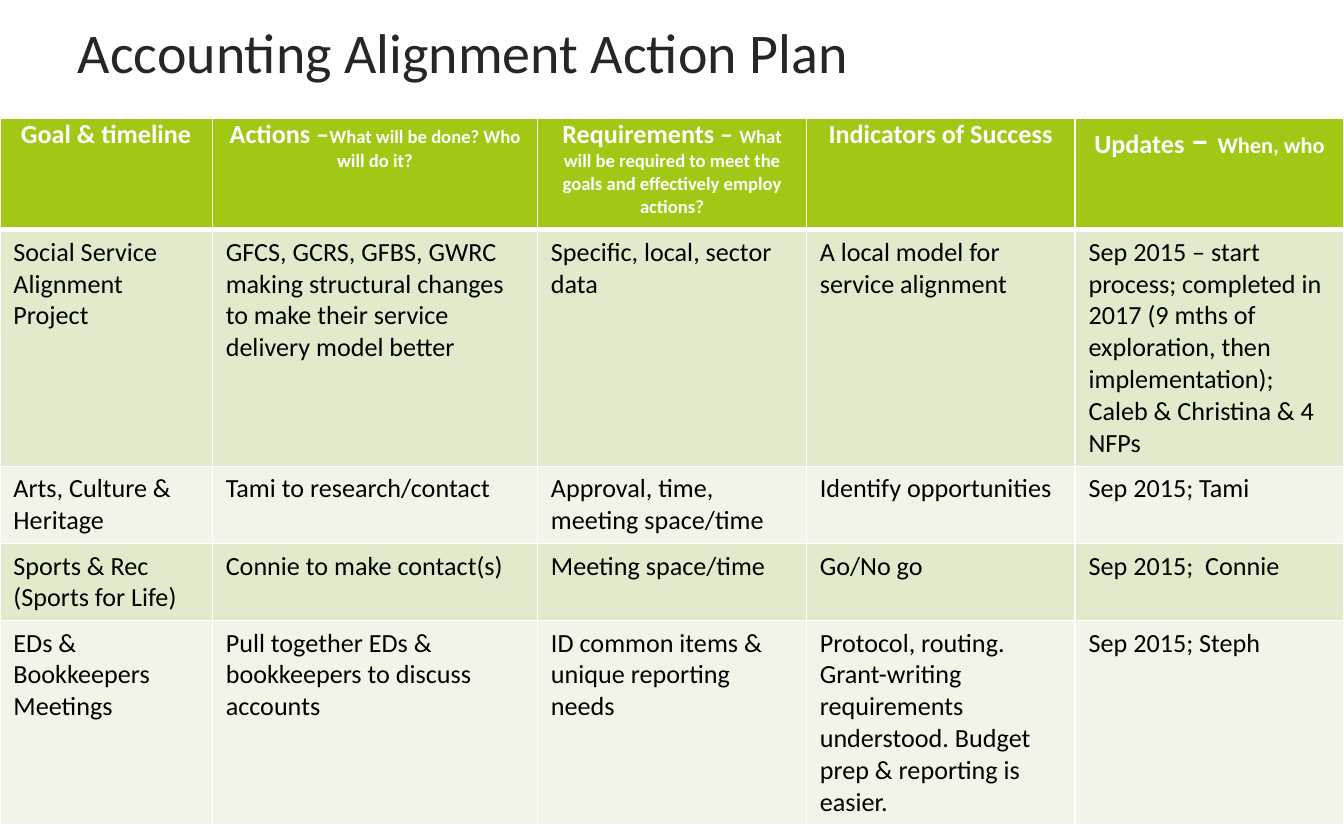
from dataclasses import dataclass

from lxml import etree
from pptx import Presentation
from pptx.dml.color import RGBColor
from pptx.enum import text
from pptx.oxml import ns
from pptx.util import Inches, Pt


@dataclass(frozen=True)
class Theme:
    font: str = "Calibri"
    title_size: int = 30
    size: int = 14
    note_size: int = 10
    title: str = "262626"
    ink: str = "000000"
    white: str = "FFFFFF"
    header: str = "A2C816"
    bands: tuple = ("E0EBCC", "F0F5E8")
    rule: int = 1
    header_rule: int = 3


THEME = Theme()
TITLE = "Accounting Alignment Action Plan"

# Each heading is a list of (text, size) runs.
HEADINGS = [
    [("Goal & timeline", THEME.size)],
    [("Actions –", THEME.size),
     ("What will be done? Who will do it?", THEME.note_size)],
    [("Requirements – ", THEME.size),
     ("What will be required to meet the goals and effectively employ actions?",
      THEME.note_size)],
    [("Indicators of Success", THEME.size)],
    [("Updates ", THEME.size), ("– ", 20), ("When, who", 12)],
]
GOALS = [
    ["Social Service Alignment Project",
     "GFCS, GCRS, GFBS, GWRC making structural changes to make their service "
     "delivery model better",
     "Specific, local, sector data",
     "A local model for service alignment",
     "Sep 2015 – start process; completed in 2017 (9 mths of exploration, then "
     "implementation); Caleb & Christina & 4 NFPs"],
    ["Arts, Culture & Heritage", "Tami to research/contact",
     "Approval, time, meeting space/time", "Identify opportunities",
     "Sep 2015; Tami"],
    ["Sports & Rec (Sports for Life)", "Connie to make contact(s)",
     "Meeting space/time", "Go/No go", "Sep 2015;  Connie"],
    ["EDs & Bookkeepers Meetings",
     "Pull together EDs & bookkeepers to discuss accounts",
     "ID common items & unique reporting needs",
     "Protocol, routing. Grant-writing requirements understood. Budget prep & "
     "reporting is easier.",
     "Sep 2015; Steph"],
]
COLUMN_WIDTHS = [1.58, 2.42, 2, 2, 2]
ROW_HEIGHTS = [0.83, 1.76, 0.57, 0.57, 1.51]


def style_run(r, size, color, bold=False):
    r.font.name = THEME.font
    r.font.size = Pt(size)
    r.font.bold = bold
    r.font.color.rgb = RGBColor.from_string(color)


def add_borders(cell, top, bottom):
    """Draw white rules round a cell; widths are in points."""
    tc_pr = cell._tc.get_or_add_tcPr()
    for side, width in (("L", THEME.rule), ("R", THEME.rule),
                        ("T", top), ("B", bottom)):
        ln = etree.SubElement(tc_pr, ns.qn(f"a:ln{side}"), w=str(Pt(width)))
        fill = etree.SubElement(ln, ns.qn("a:solidFill"))
        etree.SubElement(fill, ns.qn("a:srgbClr"), val=THEME.white)


def fill_cell(cell, runs, row):
    is_header = row == 0
    add_borders(cell,
                top=THEME.header_rule if row == 1 else THEME.rule,
                bottom=THEME.header_rule if is_header else THEME.rule)
    cell.fill.solid()
    cell.fill.fore_color.rgb = RGBColor.from_string(
        THEME.header if is_header else THEME.bands[(row - 1) % 2])
    p = cell.text_frame.paragraphs[0]
    if is_header:
        cell.margin_left = cell.margin_right = Inches(0.07)
        cell.margin_top = cell.margin_bottom = 0
        p.alignment = text.PP_ALIGN.CENTER
    for words, size in runs:
        r = p.add_run()
        r.text = words
        style_run(r, size, THEME.white if is_header else THEME.ink, is_header)


def add_title(s):
    sp = s.shapes.title
    sp.left, sp.top, sp.width, sp.height = map(Inches, (0.48, 0.07, 9.19, 0.62))
    tf = sp.text_frame
    tf.text = TITLE
    tf.vertical_anchor = text.MSO_ANCHOR.MIDDLE
    p = tf.paragraphs[0]
    p.alignment = text.PP_ALIGN.LEFT
    style_run(p.runs[0], THEME.title_size, THEME.title)


def add_plan(s):
    rows = [HEADINGS] + [[[(words, THEME.size)] for words in goal]
                         for goal in GOALS]
    table = s.shapes.add_table(
        len(rows), len(COLUMN_WIDTHS), 0, Inches(0.88),
        Inches(sum(COLUMN_WIDTHS)), Inches(sum(ROW_HEIGHTS))).table
    for column, width in zip(table.columns, COLUMN_WIDTHS):
        column.width = Inches(width)
    for i, (cells, height) in enumerate(zip(rows, ROW_HEIGHTS)):
        table.rows[i].height = Inches(height)
        for j, runs in enumerate(cells):
            fill_cell(table.cell(i, j), runs, i)


def main():
    prs = Presentation()
    prs.slide_width, prs.slide_height = Inches(10), Inches(6.25)
    s = prs.slides.add_slide(prs.slide_layouts[5])
    add_title(s)
    add_plan(s)
    prs.save("out.pptx")


if __name__ == "__main__":
    main()
